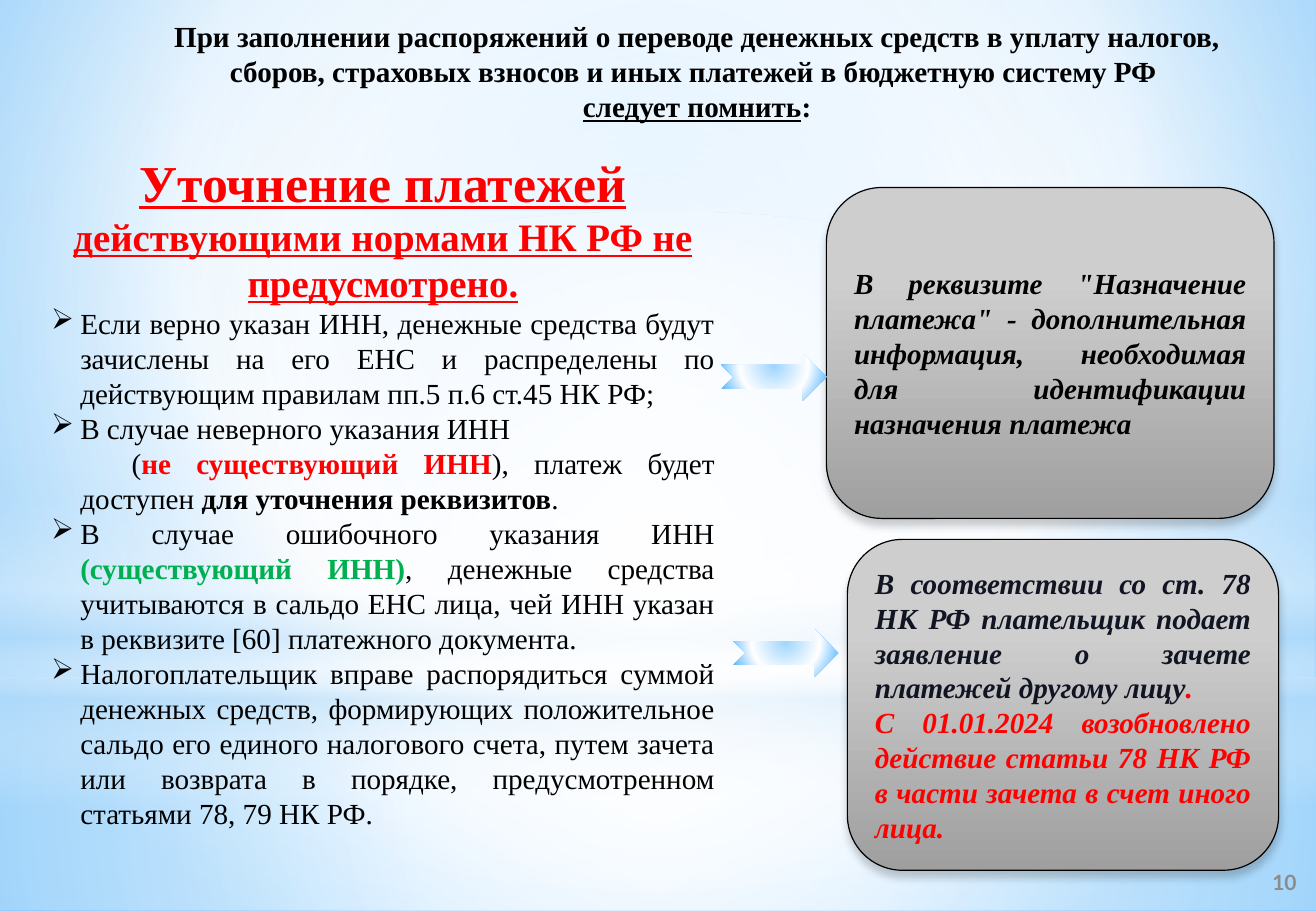
import pptx
import pptx.util
import pptx.dml.color
import pptx.enum.shapes
import pptx.enum.text
import pptx.oxml
import pptx.oxml.ns

Inches = pptx.util.Inches
Pt = pptx.util.Pt
KIND = pptx.enum.shapes.MSO_SHAPE
ALIGN = pptx.enum.text.PP_ALIGN
ANCHOR = pptx.enum.text.MSO_ANCHOR
FIT = pptx.enum.text.MSO_AUTO_SIZE
qn = pptx.oxml.ns.qn
NS = pptx.oxml.ns.nsdecls("a")

HUES = {"black": "000000", "white": "FFFFFF", "red": "FF0000", "green": "00B050",
        "navy": "111422", "gray": "8C8C8C", "sky": "9ED5FF", "blue": "5BB9FF",
        "pale": "B4DCFA", "light": "CECECE", "dark": "9F9F9F"}
SERIF = "Times New Roman"
W, H = 11.29, 563 / 72
MID = (50, 50, 50, 50)

# Gradients: stops are (position, colour, opacity), then the focus box or None
GLOW = ([(0, "sky", 100), (60, "white", 100), (100, "blue", 100)], (20, 10, 20, 60))
STEEL = ([(28, "light", 100), (100, "dark", 100)], None)

# Backdrop layers: kind, box, gradient
LAYERS = [
    (KIND.RECTANGLE, (0, 5.82, W, H - 5.82),
     ([(0, "white", 91), (37, "white", 76), (100, "pale", 79)], MID)),
    (KIND.RECTANGLE, (0, 0, W, 5.82),
     ([(0, "white", 89), (48, "white", 62), (100, "pale", 79)], MID)),
    (KIND.RECTANGLE, (0, 4.3, W, 2.61),
     ([(0, "white", 0), (29, "white", 30), (45, "pale", 40), (55, "white", 26),
       (65, "pale", 60), (100, "white", 0)], None)),
    (KIND.OVAL, (0, 1.82, W, 5.82),
     ([(0, "white", 100), (56, "white", 0)], MID)),
]

# Text: runs are (text, format changes)
BOLD = {"bold": True}
HEAD = {"bold": True, "underline": True, "hue": "red"}
TITLE = [
    [("При заполнении распоряжений о переводе денежных средств в уплату налогов, "
      "сборов, страховых взносов и иных платежей в бюджетную систему РФ ", BOLD)],
    [("следует помнить", {"bold": True, "underline": True}), (":", BOLD)],
]
HEADING = [("Уточнение платежей ", {**HEAD, "size": Pt(32)}),
           ("действующими нормами НК РФ не предусмотрено.", {**HEAD, "size": Pt(24)})]
# Points: first-line indent, bullet or None, runs
POINTS = [
    (-0.25, "➢", [("Если верно указан ИНН, денежные средства будут зачислены на его ЕНС и "
                   "распределены по действующим правилам пп.5 п.6 ст.45 НК РФ;", {})]),
    (-0.25, "➢", [("В случае неверного указания ИНН", {})]),
    (0.44, None, [("(", {}), ("не существующий ИНН", {"bold": True, "hue": "red"}),
                  ("), платеж будет доступен ", {}),
                  ("для уточнения реквизитов", BOLD), (".", {})]),
    (-0.25, "➢", [("В случае ошибочного указания ИНН ", {}),
                  ("(существующий ИНН)", {"bold": True, "hue": "green"}),
                  (", денежные средства учитываются в сальдо ЕНС лица, чей ИНН указан "
                   "в реквизите [60] платежного документа.", {})]),
    (-0.25, "➢", [("Налогоплательщик вправе распорядиться суммой денежных средств, "
                   "формирующих положительное сальдо его единого налогового счета, путем "
                   "зачета или возврата в порядке, предусмотренном статьями 78, 79 НК РФ.", {})]),
]
SLANT = {"bold": True, "italic": True}
ALERT = {**SLANT, "hue": "red"}
PURPOSE = [[("В реквизите \"Назначение платежа\" - дополнительная информация, "
             "необходимая для идентификации назначения платежа", SLANT)]]
CLAIM = [
    [("В соответствии со ст. 78 НК РФ плательщик подает заявление о зачете "
      "платежей другому лицу", {**SLANT, "hue": "navy"}), (".", ALERT)],
    [("С 01.01.2024 возобновлено действие статьи 78 НК РФ "
      "в части зачета в счет иного лица.", ALERT)],
]


def style(item, values):
    for name, value in values.items():
        setattr(item, name, value)


def color(hue):
    return pptx.dml.color.RGBColor.from_string(HUES[hue])


def shade(fill, node, blend):
    """Swap the fill of a properties node for a gradient."""
    stops, focus = blend
    marks = "".join(
        f'<a:gs pos="{pos * 1000}"><a:srgbClr val="{HUES[hue]}">'
        f'<a:alpha val="{alpha * 1000}"/></a:srgbClr></a:gs>' for pos, hue, alpha in stops)
    if focus:
        sides = " ".join(f'{s}="{v * 1000}"' for s, v in zip("ltrb", focus))
        way = f'<a:path path="circle"><a:fillToRect {sides}/></a:path>'
    else:
        way = '<a:lin ang="5400000" scaled="0"/>'
    fill.background()
    node.replace(node.find(qn("a:noFill")), pptx.oxml.parse_xml(
        f'<a:gradFill {NS} rotWithShape="1"><a:gsLst>{marks}</a:gsLst>{way}</a:gradFill>'))


def form(slide, kind, box, blend):
    shape = slide.shapes.add_shape(kind, *map(Inches, box))
    shape.shadow.inherit = False
    shape.line.fill.background()
    shade(shape.fill, shape.element.spPr, blend)
    return shape


def write(para, runs, align):
    para.alignment = align
    for text, extra in runs:
        run = para.add_run()
        run.text = text
        look = {"name": SERIF, "size": Pt(18), "bold": False, "hue": "black", **extra}
        run.font.color.rgb = color(look.pop("hue"))
        style(run.font, look)


def fill_text(frame, paras, align):
    for i, runs in enumerate(paras):
        write(frame.add_paragraph() if i else frame.paragraphs[0], runs, align)


def backdrop(slide):
    shade(slide.background.fill, slide.element.find(".//" + qn("p:bgPr")), GLOW)
    for kind, box, blend in LAYERS:
        form(slide, kind, box, blend)


def header(slide, box):
    title = slide.shapes.title
    title.element.getparent().append(title.element)  # in front of the backdrop
    style(title, dict(zip(("left", "top", "width", "height"), map(Inches, box))))
    style(title.text_frame, {"word_wrap": True, "auto_size": FIT.NONE,
                             "vertical_anchor": ANCHOR.TOP})
    fill_text(title.text_frame, TITLE, ALIGN.CENTER)


def rules(slide, box):
    frame = slide.shapes.add_textbox(*map(Inches, box)).text_frame
    frame.word_wrap = True
    write(frame.paragraphs[0], HEADING, ALIGN.CENTER)
    for indent, mark, runs in POINTS:
        para = frame.add_paragraph()
        write(para, runs, ALIGN.JUSTIFY)
        props = para._p.get_or_add_pPr()
        props.set("marL", str(Inches(0.25)))
        props.set("indent", str(Inches(indent)))
        if mark:
            props.append(pptx.oxml.parse_xml(f'<a:buChar {NS} char="{mark}"/>'))


def card(slide, box, paras):
    shape = form(slide, KIND.ROUNDED_RECTANGLE, box, STEEL)
    shape.line.color.rgb = color("black")
    shape.line.width = Pt(0.75)
    shape.element.spPr.find(qn("a:effectLst")).append(pptx.oxml.parse_xml(
        f'<a:outerShdw {NS} blurRad="{Pt(5)}" dist="{Pt(4)}" dir="5400000" rotWithShape="0">'
        f'<a:srgbClr val="{HUES["black"]}"><a:alpha val="20000"/></a:srgbClr></a:outerShdw>'))
    style(shape.text_frame, {"word_wrap": True, "vertical_anchor": ANCHOR.MIDDLE})
    fill_text(shape.text_frame, paras, ALIGN.JUSTIFY)


def number(slide, box):
    frame = slide.shapes.add_textbox(*map(Inches, box)).text_frame
    style(frame, {"word_wrap": True, "vertical_anchor": ANCHOR.MIDDLE,
                  "margin_left": 0, "margin_right": 0})
    look = {"name": "Lato", "size": Pt(13), "bold": True, "hue": "gray"}
    write(frame.paragraphs[0], [("10", look)], ALIGN.CENTER)


def main():
    deck = pptx.Presentation()
    deck.slide_width = Inches(W)
    deck.slide_height = Inches(H)
    slide = deck.slides.add_slide(deck.slide_layouts[5])
    backdrop(slide)
    header(slide, (1.38, 0.11, 9.2, 1.01))
    rules(slide, (0.34, 1.24, 5.89, 5.99))
    card(slide, (7.27, 4.63, 3.7, 2.84), CLAIM)
    card(slide, (7.09, 1.61, 3.84, 2.84), PURPOSE)
    for left, top in ((6.19, 3.03), (6.29, 5.4)):
        form(slide, KIND.NOTCHED_RIGHT_ARROW, (left, top, 0.9, 0.41), GLOW)
    number(slide, (10.75, 7.36, 0.54, 0.42))
    deck.save("out.pptx")


if __name__ == "__main__":
    main()
